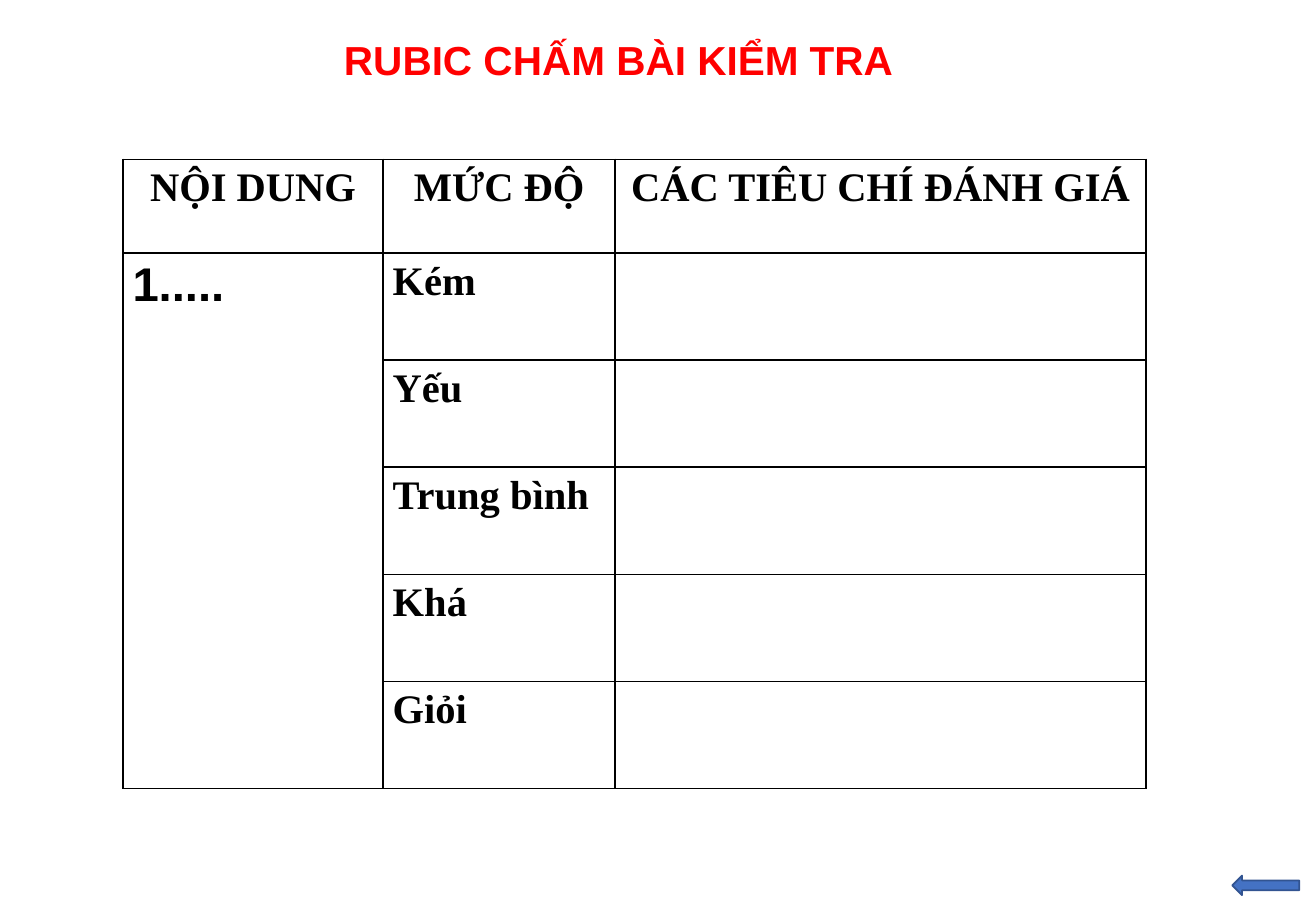
from lxml.etree import SubElement
from pptx import Presentation
from pptx.dml.color import RGBColor
from pptx.enum.shapes import MSO_SHAPE
from pptx.enum.text import MSO_AUTO_SIZE, PP_ALIGN
from pptx.oxml.ns import qn
from pptx.util import Cm, Pt


def color(value):
    return RGBColor.from_string(value)


def write(frame, text, font_name, size, ink, align):
    frame.text = text
    para = frame.paragraphs[0]
    para.alignment = align
    for span in para.runs:
        span.font.name = font_name
        span.font.size = Pt(size)
        span.font.bold = True
        span.font.color.rgb = color(ink)


deck = Presentation()
deck.slide_width, deck.slide_height = Cm(27.51), Cm(19.05)
page = deck.slides.add_slide(deck.slide_layouts[6])

title = page.shapes.add_textbox(Cm(5.97), Cm(0.61), Cm(13.92), Cm(1.27))
title.text_frame.word_wrap = True
title.text_frame.auto_size = MSO_AUTO_SIZE.SHAPE_TO_FIT_TEXT
write(title.text_frame, "RUBIC CHẤM BÀI KIỂM TRA", "Arial", 24, "FF0000", PP_ALIGN.CENTER)

headings = ["NỘI DUNG", "MỨC ĐỘ", "CÁC TIÊU CHÍ ĐÁNH GIÁ"]
levels = ["Kém", "Yếu", "Trung bình", "Khá", "Giỏi"]
column_widths = [5.44, 4.85, 11.1]
row_heights = [1.96] + [2.24] * len(levels)

rubric = page.shapes.add_table(
    len(row_heights), len(headings), Cm(2.57), Cm(3.33),
    Cm(sum(column_widths)), Cm(sum(row_heights)),
).table
for column, width in zip(rubric.columns, column_widths):
    column.width = Cm(width)
for row, height in zip(rubric.rows, row_heights):
    row.height = Cm(height)

for cell in rubric.iter_cells():
    cell.margin_left = cell.margin_right = Cm(0.2)
    cell.margin_top = cell.margin_bottom = Cm(0.13)
    properties = cell._tc.get_or_add_tcPr()
    for side in ("a:lnL", "a:lnR", "a:lnT", "a:lnB"):
        border = SubElement(properties, qn(side), w=str(Pt(1)))
        fill = SubElement(border, qn("a:solidFill"))
        SubElement(fill, qn("a:srgbClr"), val="000000")
    cell.fill.solid()
    cell.fill.fore_color.rgb = color("FFFFFF")

for index, heading in enumerate(headings):
    write(rubric.cell(0, index).text_frame, heading, "Times New Roman", 24, "000000", PP_ALIGN.CENTER)
for index, level in enumerate(levels, start=1):
    write(rubric.cell(index, 1).text_frame, level, "Times New Roman", 24, "000000", PP_ALIGN.LEFT)

rubric.cell(1, 0).merge(rubric.cell(len(levels), 0))
write(rubric.cell(1, 0).text_frame, "1.....", "Arial", 28, "000000", PP_ALIGN.LEFT)

back_arrow = page.shapes.add_shape(MSO_SHAPE.LEFT_ARROW, Cm(25.76), Cm(18.31), Cm(1.4), Cm(0.41))
back_arrow.shadow.inherit = False
back_arrow.fill.solid()
back_arrow.fill.fore_color.rgb = color("4472C4")
back_arrow.line.color.rgb = color("325491")
back_arrow.line.width = Pt(1)

deck.save("out.pptx")
